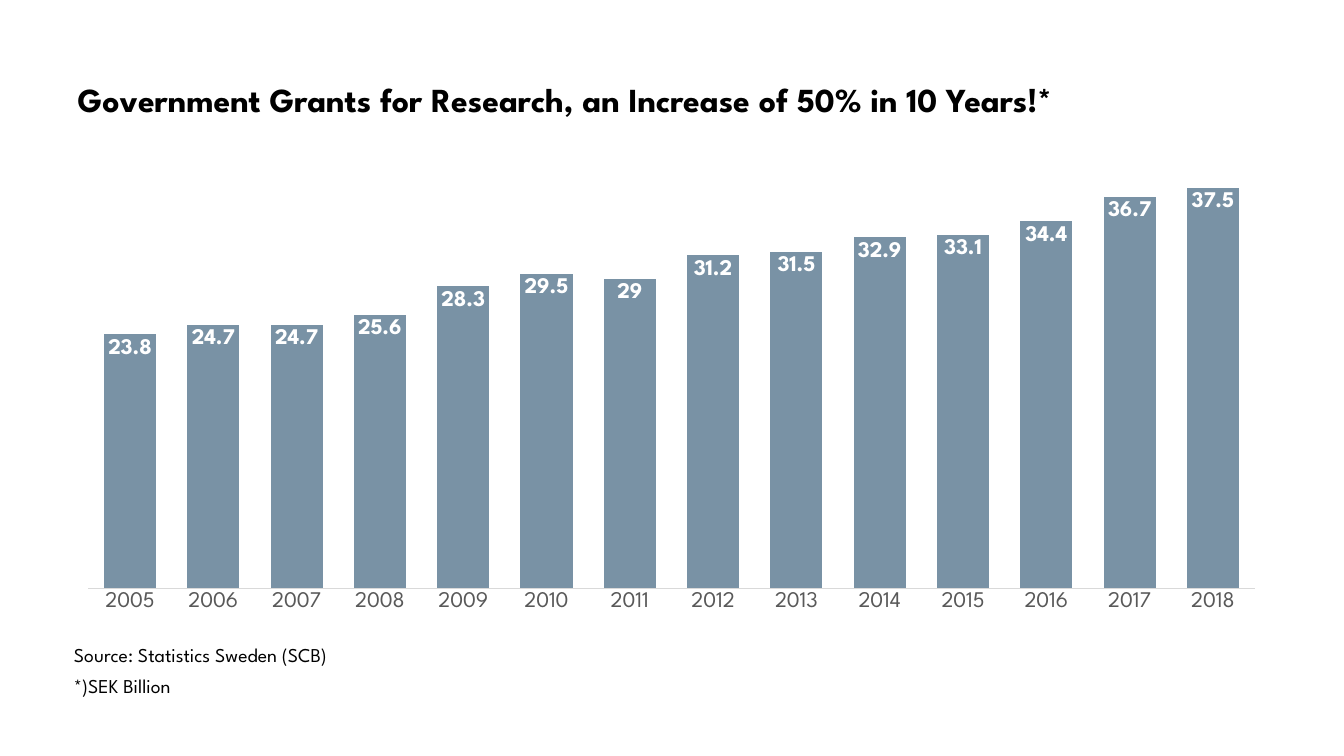
import pptx
import pptx.chart.data
import pptx.dml.color
import pptx.enum.chart
import pptx.enum.text
import pptx.util

PX = 9525  # EMU per px, 96 px to the inch
FONT = "League Spartan"
BLACK, WHITE = "000000", "FFFFFF"
BAR_BLUE, LABEL_GRAY, AXIS_GRAY = "7992A5", "595959", "D9D9D9"

FIRST_YEAR = 2005
GRANTS = [23.8, 24.7, 24.7, 25.6, 28.3, 29.5, 29,
          31.2, 31.5, 32.9, 33.1, 34.4, 36.7, 37.5]
NOTES = [("Source: Statistics Sweden (SCB)", 608, 347),
         ("*)SEK Billion", 637, 270)]


def color(hex_string):
    return pptx.dml.color.RGBColor.from_string(hex_string)


def px(*lengths):
    return [pptx.util.Emu(length * PX) for length in lengths]


def style_font(font, size, hex_string, bold=False):
    font.name = FONT
    font.size = pptx.util.Pt(size)
    font.bold = bold
    font.color.rgb = color(hex_string)


def add_title(page, text):
    title = page.shapes.title
    title.left, title.top, title.width, title.height = px(74, 24, 1157, 90)
    frame = title.text_frame
    frame.margin_left = frame.margin_right = 0
    frame.margin_top = frame.margin_bottom = 0
    frame.word_wrap = True
    frame.auto_size = pptx.enum.text.MSO_AUTO_SIZE.NONE
    frame.vertical_anchor = pptx.enum.text.MSO_ANCHOR.BOTTOM
    frame.text = text
    para = frame.paragraphs[0]
    para.alignment = pptx.enum.text.PP_ALIGN.LEFT
    para.line_spacing = 0.9
    style_font(para.runs[0].font, 24, BLACK, bold=True)


def add_note(page, text, top, width):
    box = page.shapes.add_textbox(*px(61, top, width, 33))
    frame = box.text_frame
    frame.word_wrap = True
    frame.auto_size = pptx.enum.text.MSO_AUTO_SIZE.SHAPE_TO_FIT_TEXT
    frame.text = text
    style_font(frame.paragraphs[0].runs[0].font, 14, BLACK)


def add_grants_chart(page):
    data = pptx.chart.data.CategoryChartData()
    data.categories = [str(FIRST_YEAR + index) for index in range(len(GRANTS))]
    data.add_series("Series 1", GRANTS)
    chart = page.shapes.add_chart(
        pptx.enum.chart.XL_CHART_TYPE.COLUMN_CLUSTERED,
        *px(61, 145, 1157, 448), data).chart
    chart.has_legend = False
    chart.has_title = False
    style_font(chart.font, 10, BLACK)

    # Axes
    years = chart.category_axis
    years.major_tick_mark = pptx.enum.chart.XL_TICK_MARK.NONE
    years.format.line.color.rgb = color(AXIS_GRAY)
    years.format.line.width = pptx.util.Pt(0.75)
    style_font(years.tick_labels.font, 16, LABEL_GRAY)
    amounts = chart.value_axis
    amounts.minimum_scale, amounts.maximum_scale = 0, 40
    amounts.has_major_gridlines = False
    amounts.visible = False

    # Bars and their labels
    plot = chart.plots[0]
    plot.gap_width, plot.overlap = 60, -27
    plot.vary_by_categories = False
    bars = plot.series[0]
    bars.format.fill.solid()
    bars.format.fill.fore_color.rgb = color(BAR_BLUE)
    labels = bars.data_labels
    labels.show_value = True
    labels.position = pptx.enum.chart.XL_LABEL_POSITION.INSIDE_END
    style_font(labels.font, 16, WHITE, bold=True)


def main():
    deck = pptx.Presentation()
    deck.slide_width, deck.slide_height = px(1280, 720)
    page = deck.slides.add_slide(deck.slide_layouts.get_by_name("Title Only"))
    add_title(page, "Government Grants for Research, an Increase of 50% in 10 Years!*")
    add_grants_chart(page)
    for text, top, width in NOTES:
        add_note(page, text, top, width)
    deck.save("out.pptx")


if __name__ == "__main__":
    main()
